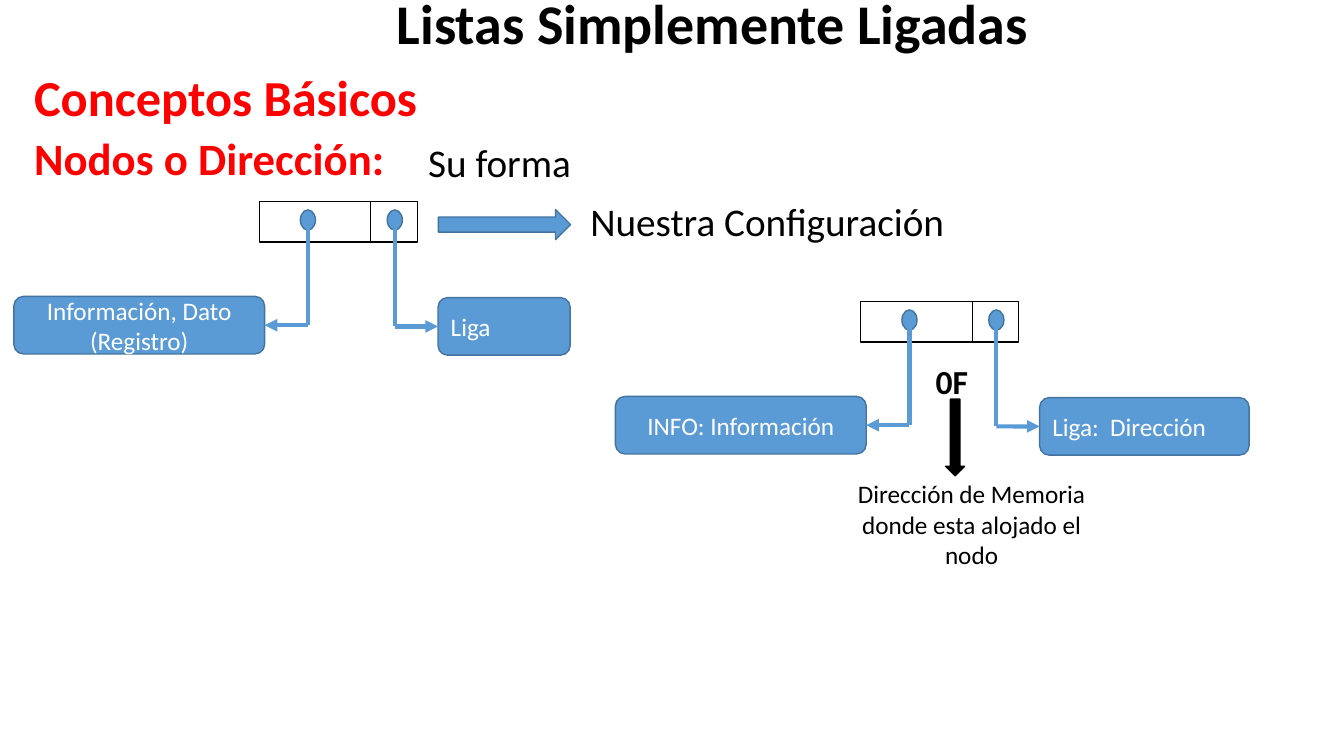
"""Build the slide on the nodes of a singly linked list."""
from dataclasses import dataclass

from lxml import etree
from pptx import Presentation
from pptx.dml.color import RGBColor
from pptx.enum.shapes import MSO_CONNECTOR, MSO_SHAPE
from pptx.enum.text import MSO_ANCHOR, PP_ALIGN
from pptx.oxml.ns import qn
from pptx.shapes.autoshape import Shape
from pptx.shapes.connector import Connector
from pptx.slide import Slide
from pptx.util import Cm, Pt

RECT = MSO_SHAPE.RECTANGLE
ROUNDED = MSO_SHAPE.ROUNDED_RECTANGLE
OVAL = MSO_SHAPE.OVAL
RIGHT_ARROW = MSO_SHAPE.RIGHT_ARROW
DOWN_ARROW = MSO_SHAPE.DOWN_ARROW
STRAIGHT = MSO_CONNECTOR.STRAIGHT
LEFT, CENTER = PP_ALIGN.LEFT, PP_ALIGN.CENTER
MIDDLE = MSO_ANCHOR.MIDDLE
LEFT_SIDE, RIGHT_SIDE = 1, 3

FONT = "Calibri"
COLORS = {"black": "000000", "red": "FF0000", "white": "FFFFFF",
          "blue": "5B9BD5", "edge": "43739E"}
CELL_H, INFO_CELL_W, LINK_CELL_W = 1.02, 2.82, 1.17
DOT_W, DOT_H = 0.38, 0.51
BOX_H, INFO_BOX_W = 1.45, 6.32


@dataclass
class Label:
    text: str
    x: float
    y: float
    w: float
    h: float
    size: int
    color: str = "black"
    bold: bool = False
    align: PP_ALIGN = LEFT


@dataclass
class Node:
    x: float
    y: float
    info: str
    link: str
    link_w: float


@dataclass
class Pointer:
    text: str
    box_x: float
    box_y: float
    box_w: float
    dot_x: float
    side: int
    align: PP_ALIGN


LABELS = [
    Label("Listas Simplemente Ligadas", 9.75, -0.41, 17.81, 1.96, 40, bold=True),
    Label("Conceptos Básicos", 0.61, 1.55, 11.3, 1.8, 36, "red", True),
    Label("Nodos o Dirección:", 0.61, 3.18, 9.93, 1.63, 32, "red", True),
    Label("Su forma", 10.54, 3.35, 9.93, 1.45, 28),
    Label("Nuestra Configuración", 14.63, 4.85, 9.93, 1.45, 28),
    Label("0F", 23.09, 8.97, 1.8, 1.27, 24, bold=True, align=CENTER),
    Label("Dirección de Memoria donde esta alojado el nodo",
          20.93, 11.94, 7.11, 2.57, 18, align=CENTER),
]
NODES = [
    Node(6.53, 5.08, "Información, Dato (Registro)", "Liga", 3.33),
    Node(21.69, 7.6, "INFO: Información", "Liga:  Dirección", 5.28),
]


def rgb(name: str) -> RGBColor:
    return RGBColor.from_string(COLORS[name])


def write(s: Shape, text: str, size: int, color: str, bold: bool,
          align: PP_ALIGN) -> None:
    tf = s.text_frame
    tf.word_wrap = True
    p = tf.paragraphs[0]
    p.add_run().text = text
    p.alignment = align
    font = p.font
    font.name, font.size, font.bold = FONT, Pt(size), bold
    font.color.rgb = rgb(color)


def add_label(slide: Slide, label: Label) -> None:
    s = slide.shapes.add_textbox(Cm(label.x), Cm(label.y), Cm(label.w), Cm(label.h))
    write(s, label.text, label.size, label.color, label.bold, label.align)


def add_figure(slide: Slide, kind: MSO_SHAPE, x: float, y: float, w: float,
               h: float, fill: str = "blue", edge: str = "edge",
               width: float = 1) -> Shape:
    s = slide.shapes.add_shape(kind, Cm(x), Cm(y), Cm(w), Cm(h))
    s.shadow.inherit = False
    if fill:
        s.fill.solid()
        s.fill.fore_color.rgb = rgb(fill)
    else:
        s.fill.background()
    s.line.color.rgb = rgb(edge)
    s.line.width = Pt(width)
    return s


def add_line(slide: Slide, x1: float, y1: float, x2: float, y2: float,
             arrow: bool = False) -> Connector:
    c = slide.shapes.add_connector(STRAIGHT, Cm(x1), Cm(y1), Cm(x2), Cm(y2))
    c.line.color.rgb = rgb("blue")
    c.line.width = Pt(3)
    if arrow:
        etree.SubElement(c.line._get_or_add_ln(), qn("a:tailEnd"), type="triangle")
    etree.SubElement(c._element.spPr, qn("a:effectLst"))
    return c


def add_pointer(slide: Slide, node: Node, ptr: Pointer) -> None:
    box_x, box_y = node.x + ptr.box_x, node.y + ptr.box_y
    box = add_figure(slide, ROUNDED, box_x, box_y, ptr.box_w, BOX_H)
    box.text_frame.vertical_anchor = MIDDLE
    write(box, ptr.text, 18, "white", False, ptr.align)

    dot_x, dot_y = node.x + ptr.dot_x, node.y + 0.21
    add_figure(slide, OVAL, dot_x, dot_y, DOT_W, DOT_H)
    stem_x, turn_y = dot_x + DOT_W / 2, box_y + BOX_H / 2
    add_line(slide, stem_x, dot_y + DOT_H / 2, stem_x, turn_y)
    end_x = box_x + (ptr.box_w if ptr.side == RIGHT_SIDE else 0)
    c = add_line(slide, stem_x, turn_y, end_x, turn_y, arrow=True)
    c.end_connect(box, ptr.side)


def add_node(slide: Slide, node: Node) -> None:
    for x, w in ((node.x, INFO_CELL_W), (node.x + INFO_CELL_W, LINK_CELL_W)):
        add_figure(slide, RECT, x, node.y, w, CELL_H, "", "black", 0.75)
    for ptr in (
        Pointer(node.info, -6.18, 2.39, INFO_BOX_W, 1.04, RIGHT_SIDE, CENTER),
        Pointer(node.link, 4.51, 2.42, node.link_w, 3.23, LEFT_SIDE, LEFT),
    ):
        add_pointer(slide, node, ptr)


def main() -> None:
    prs = Presentation()
    prs.slide_width, prs.slide_height = Cm(33.87), Cm(19.05)
    slide = prs.slides.add_slide(prs.slide_layouts[6])
    for node in NODES:
        add_node(slide, node)
    add_figure(slide, RIGHT_ARROW, 11.05, 5.28, 3.33, 0.76)
    for label in LABELS:
        add_label(slide, label)
    add_figure(slide, DOWN_ARROW, 23.83, 10.06, 0.48, 1.93, "black", "black")
    prs.save("out.pptx")


if __name__ == "__main__":
    main()
